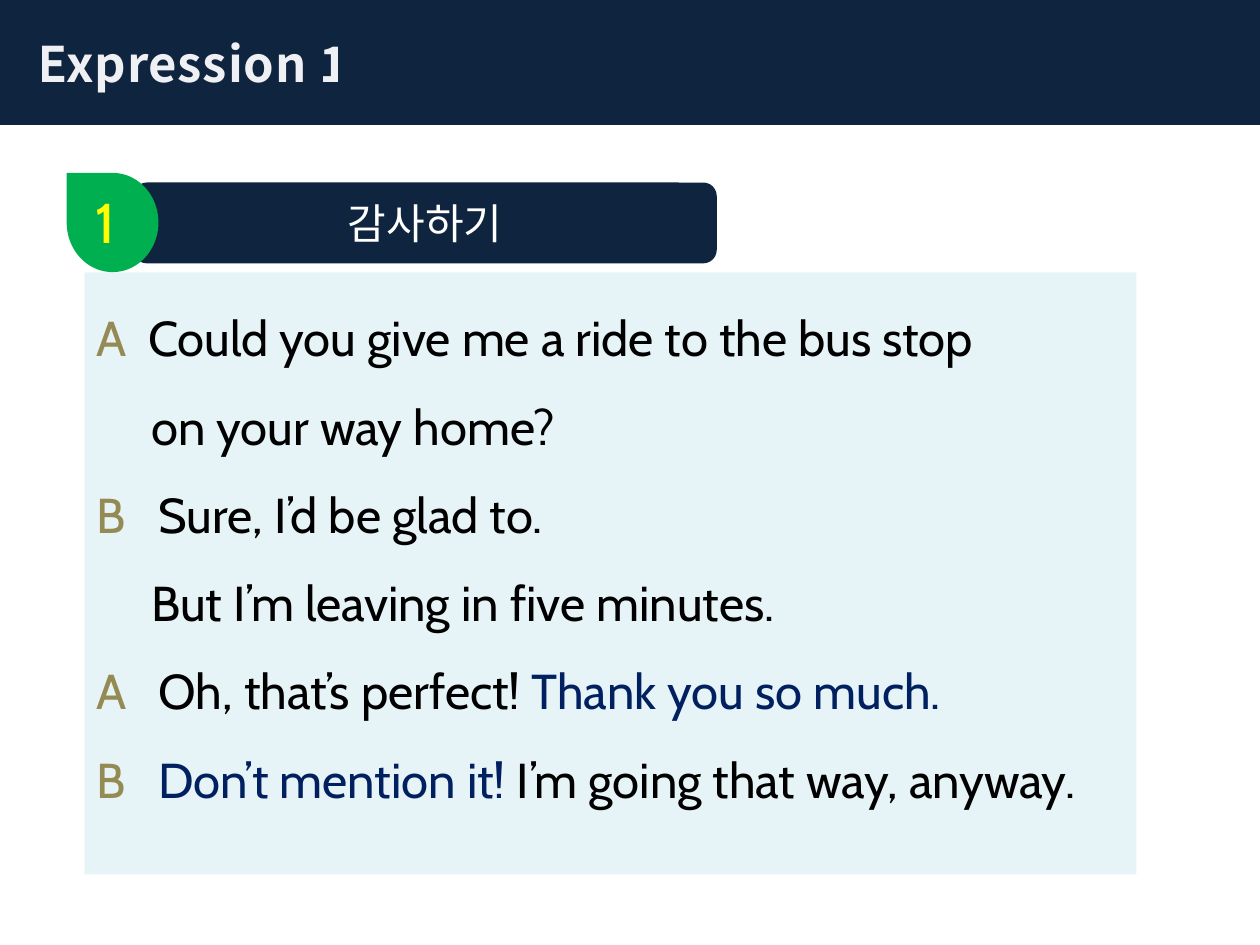
from lxml import etree
from pptx import Presentation
from pptx.dml.color import RGBColor
from pptx.enum import shapes, text
from pptx.oxml.ns import qn
from pptx.util import Cm, Pt

NAVY, GOLD, BLACK, BLUE = "0F243E", "948A54", "000000", "002060"
LATIN, KOREAN = "Cabin", "Noto Sans CJK KR"

TITLE = "Expression 1"
TOPIC = "감사하기"
NUMBER = "1"

# Speaker, text indent in cm, phrases with their colours
DIALOGUE = [
    ("A", 1.04, [("Could you give me a ride to the bus stop", BLACK)]),
    ("", 1.1, [("on your way home?", BLACK)]),
    ("B", 1.25, [("Sure, I’d be glad to.", BLACK)]),
    ("", 1.1, [("But I’m leaving in five minutes.", BLACK)]),
    ("A", 1.25, [("Oh, that’s perfect! ", BLACK), ("Thank you so much.", BLUE)]),
    ("B", 1.25, [("Don’t mention it! ", BLUE), ("I’m going that way, anyway.", BLACK)]),
]


def rgb(color):
    return RGBColor.from_string(color)


def add_alpha(fill_parent, percent):
    color = fill_parent.find(qn("a:solidFill")).find(qn("a:srgbClr"))
    etree.SubElement(color, qn("a:alpha"), val=str(percent * 1000))


def add_block(slide, preset, box, color):
    block = slide.shapes.add_shape(preset, *map(Cm, box))
    block.shadow.inherit = False
    block.fill.solid()
    block.fill.fore_color.rgb = rgb(color)
    block.line.fill.background()
    block.text_frame.word_wrap = True
    return block


def style(paragraph, font_name, size, color=None, align=text.PP_ALIGN.LEFT):
    paragraph.alignment = align
    font = paragraph.font
    font.size = Pt(size)
    if color:
        font.color.rgb = rgb(color)
    font.name = font_name
    properties = paragraph._p.pPr.find(qn("a:defRPr"))
    etree.SubElement(properties, qn("a:ea"), typeface=font_name)
    return properties


def add_run(paragraph, words, color):
    run = paragraph.add_run()
    run.text = words
    run.font.color.rgb = rgb(color)


prs = Presentation()
prs.slide_width, prs.slide_height = Cm(25.4), Cm(19.05)
slide = prs.slides.add_slide(prs.slide_layouts[6])
kind = shapes.MSO_SHAPE

# Dialogue panel
panel = add_block(slide, kind.RECTANGLE, (1.7, 5.49, 21.21, 12.14), "B7DEE8")
add_alpha(panel._element.spPr, 32)
frame = panel.text_frame
frame.vertical_anchor = text.MSO_ANCHOR.TOP
for i, (speaker, indent, phrases) in enumerate(DIALOGUE):
    line = frame.add_paragraph() if i else frame.paragraphs[0]
    style(line, LATIN, 28, align=text.PP_ALIGN.JUSTIFY)
    line.line_spacing = 1.5
    line._p.pPr.set("marL", str(Cm(indent)))
    line._p.pPr.set("indent", str(-Cm(indent) if speaker else 0))
    if speaker:
        add_run(line, speaker + "\t", GOLD)
    for words, color in phrases:
        add_run(line, words, color)

# Title band
band = add_block(slide, kind.RECTANGLE, (0, 0, 25.4, 2.52), NAVY)
band.text_frame.vertical_anchor = text.MSO_ANCHOR.MIDDLE
title = band.text_frame.paragraphs[0]
title.text = TITLE
title.font.bold = True
title_format = style(title, KOREAN, 28, "FCFCFD")
title._p.pPr.set("marL", str(Cm(0.51)))
title_format.set("spc", "50")
add_alpha(title_format, 95)
outline = etree.Element(qn("a:ln"), w=str(Pt(1.06)))
outline_fill = etree.SubElement(outline, qn("a:solidFill"))
etree.SubElement(outline_fill, qn("a:srgbClr"), val="101A26")
add_alpha(outline, 6)
title_format.insert(0, outline)

# Topic bar
bar = add_block(slide, kind.FLOWCHART_ALTERNATE_PROCESS, (2.69, 3.68, 11.76, 1.63), NAVY)
bar.text_frame.vertical_anchor = text.MSO_ANCHOR.MIDDLE
topic = bar.text_frame.paragraphs[0]
topic.text = TOPIC
style(topic, KOREAN, 24, "FFFFFF", text.PP_ALIGN.CENTER)

# Numbered badge
badge = add_block(slide, kind.TEAR, (1.27, 3.56, 2, 1.85), "00B050")
badge.rotation = 270
label = slide.shapes.add_textbox(Cm(1.68), Cm(3.66), Cm(1.19), Cm(1.63))
label.text_frame.word_wrap = True
label.text_frame.auto_size = text.MSO_AUTO_SIZE.SHAPE_TO_FIT_TEXT
number = label.text_frame.paragraphs[0]
number.text = NUMBER
style(number, LATIN, 32, "FFFF00")

prs.save("out.pptx")
